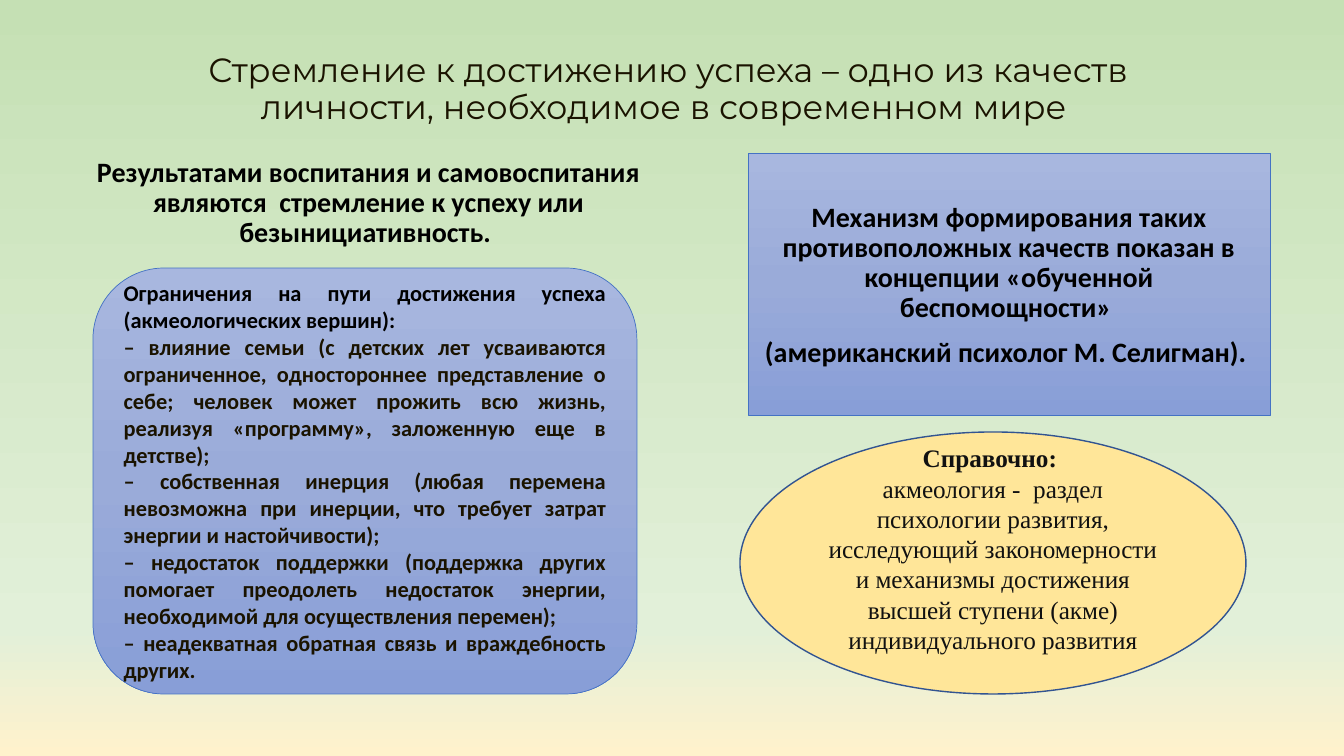
"""Build the slide about striving for success and its obstacles."""
from lxml.etree import SubElement
from pptx import Presentation
from pptx.dml.color import RGBColor
from pptx.enum.shapes import MSO_SHAPE
from pptx.enum.text import MSO_ANCHOR, MSO_AUTO_SIZE, PP_ALIGN
from pptx.oxml.ns import qn
from pptx.util import Emu, Pt

BLACK = RGBColor(0x00, 0x00, 0x00)
DARK = RGBColor(0x1A, 0x13, 0x00)
NEAR_BLACK = RGBColor(0x11, 0x11, 0x11)
BLUE_LINE = RGBColor(0x44, 0x72, 0xC4)
NAVY_LINE = RGBColor(0x32, 0x54, 0x91)
YELLOW = RGBColor(0xFF, 0xE6, 0x99)
BLUE_STOPS = [(0, RGBColor(0xA8, 0xB7, 0xDF)), (50, RGBColor(0x9A, 0xAB, 0xD9)),
              (100, RGBColor(0x88, 0x9E, 0xD7))]
MEADOW_STOPS = [(0, RGBColor(0xC5, 0xE0, 0xB4)), (83, RGBColor(0xE2, 0xF0, 0xD9)),
                (100, RGBColor(0xFF, 0xF2, 0xCC))]

TITLE = "Стремление к достижению успеха – одно из качеств личности, необходимое в современном мире "
RESULTS = "Результатами воспитания и самовоспитания являются  стремление к успеху или безынициативность. "
MECHANISM = [
    "Механизм формирования таких противоположных качеств показан в концепции «обученной беспомощности» ",
    "(американский психолог М. Селигман). ",
]
LIMITS_HEADING = "Ограничения на пути достижения успеха (акмеологических вершин): "
LIMITS = [
    "– влияние семьи (с детских лет усваиваются ограниченное, одностороннее представление о себе; "
    "человек может прожить всю жизнь, реализуя «программу», заложенную еще в детстве); ",
    "– собственная инерция (любая перемена невозможна при инерции, что требует затрат энергии "
    "и настойчивости); ",
    "– недостаток поддержки (поддержка других помогает преодолеть недостаток энергии, "
    "необходимой для осуществления перемен); ",
    "– неадекватная обратная связь и враждебность других. ",
]
REFERENCE_HEADING = "Справочно: "
REFERENCE = ("акмеология -  раздел психологии развития, исследующий закономерности и механизмы "
             "достижения высшей ступени (акме) индивидуального развития")

SLIDE_SIZE = (1344, 756)
TITLE_BOX = (130, 27, 1076, 126)
RESULTS_BOX = (74, 153, 589, 532)
MECHANISM_BOX = (748, 153, 522, 262)
LIMITS_BOX = (93, 268, 544, 426)
REFERENCE_BOX = (740, 432, 506, 262)
MECHANISM_TOP_INSET = 50
REFERENCE_BOTTOM_INSET = 34


def px(length):
    """Turn slide pixels into EMU."""
    return Emu(round(length * 914400 / 100.8))


def set_gradient(fill, element, stops):
    """Give a fill a vertical gradient with the listed stops."""
    fill.gradient()
    fill.gradient_angle = 270
    stop_list = element.xpath(".//a:gsLst")[0]
    for old_stop in list(stop_list):
        stop_list.remove(old_stop)
    for percent, color in stops:
        stop = SubElement(stop_list, qn("a:gs"), pos=str(percent * 1000))
        SubElement(stop, qn("a:srgbClr"), val=str(color))


def write(shape, lines, font, size, align, anchor, spacing=1.0, before=0):
    """Write lines of (text, color, bold) as paragraphs of a shape."""
    frame = shape.text_frame
    frame.word_wrap = True
    frame.auto_size = MSO_AUTO_SIZE.NONE
    frame.vertical_anchor = anchor
    for index, (text, color, bold) in enumerate(lines):
        paragraph = frame.add_paragraph() if index else frame.paragraphs[0]
        paragraph.alignment = align
        paragraph.line_spacing = spacing
        paragraph.space_before = Pt(before if index else 0)
        run = paragraph.add_run()
        run.text = text
        run.font.name = font
        run.font.size = Pt(size)
        run.font.bold = bold
        run.font.color.rgb = color


def add_panel(slide, kind, box, line_color, line_width):
    """Add an outlined shape without a shadow."""
    shape = slide.shapes.add_shape(kind, *map(px, box))
    shape.shadow.inherit = False
    shape.line.color.rgb = line_color
    shape.line.width = Pt(line_width)
    return shape


def main():
    """Build and save the slide."""
    presentation = Presentation()
    presentation.slide_width, presentation.slide_height = map(px, SLIDE_SIZE)
    slide = presentation.slides.add_slide(presentation.slide_layouts[5])
    set_gradient(slide.background.fill, slide.element, MEADOW_STOPS)

    title = slide.shapes.title
    title.left, title.top, title.width, title.height = map(px, TITLE_BOX)
    write(title, [(TITLE, DARK, False)], "Montserrat", 24, PP_ALIGN.CENTER, MSO_ANCHOR.MIDDLE, 0.9)

    results = slide.shapes.add_textbox(*map(px, RESULTS_BOX))
    write(results, [(RESULTS, BLACK, True)], "Calibri", 20, PP_ALIGN.CENTER, MSO_ANCHOR.TOP, 0.9)

    mechanism = add_panel(slide, MSO_SHAPE.RECTANGLE, MECHANISM_BOX, BLUE_LINE, 0.5)
    set_gradient(mechanism.fill, mechanism.element, BLUE_STOPS)
    mechanism.text_frame.margin_top = px(MECHANISM_TOP_INSET)
    write(mechanism, [(text, BLACK, True) for text in MECHANISM], "Calibri", 20,
          PP_ALIGN.CENTER, MSO_ANCHOR.TOP, 0.9, 10)

    limits = add_panel(slide, MSO_SHAPE.ROUNDED_RECTANGLE, LIMITS_BOX, BLUE_LINE, 0.5)
    set_gradient(limits.fill, limits.element, BLUE_STOPS)
    limit_lines = [(LIMITS_HEADING, BLACK, True)] + [(text, DARK, True) for text in LIMITS]
    write(limits, limit_lines, "Calibri", 16, PP_ALIGN.JUSTIFY, MSO_ANCHOR.MIDDLE)

    reference = add_panel(slide, MSO_SHAPE.OVAL, REFERENCE_BOX, NAVY_LINE, 1)
    reference.fill.solid()
    reference.fill.fore_color.rgb = YELLOW
    reference.text_frame.margin_bottom = px(REFERENCE_BOTTOM_INSET)
    reference_lines = [(REFERENCE_HEADING, NEAR_BLACK, True), (REFERENCE, NEAR_BLACK, False)]
    write(reference, reference_lines, "Times New Roman", 18, PP_ALIGN.CENTER, MSO_ANCHOR.MIDDLE)

    presentation.save("out.pptx")


if __name__ == "__main__":
    main()
